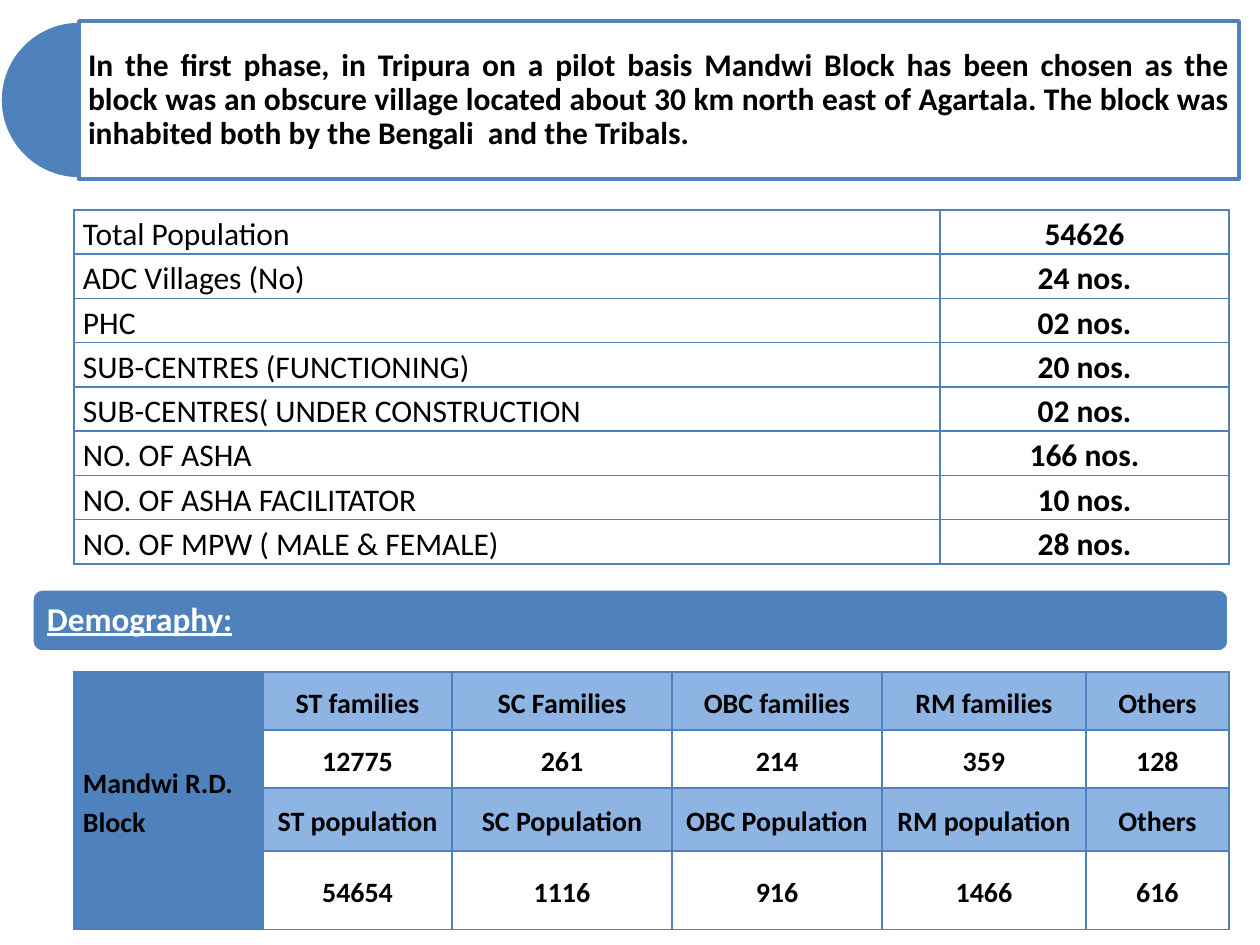
from lxml.etree import SubElement
from pptx import Presentation
from pptx.dml.color import RGBColor
from pptx.enum.shapes import MSO_SHAPE
from pptx.enum.text import MSO_ANCHOR, MSO_AUTO_SIZE, PP_ALIGN
from pptx.oxml.ns import qn
from pptx.util import Pt

PX = 914400 / 126
COLORS = {"blue": "4F81BD", "light": "8EB4E3", "white": "FFFFFF", "black": "000000"}
COLORS = {name: RGBColor.from_string(value) for name, value in COLORS.items()}


def px(*values):
    return [round(v * PX) for v in values]


def write(tf, text, color, align, spacing, **font):
    p = tf.paragraphs[0]
    p.alignment, p.line_spacing = align, spacing
    r = p.add_run()
    r.text = text
    r.font.color.rgb = COLORS[color]
    for name, value in {"name": "Calibri", **font}.items():
        setattr(r.font, name, value)


prs = Presentation()
prs.slide_width, prs.slide_height = px(1260, 945)
s = prs.slides.add_slide(prs.slide_layouts[5])

intro = s.shapes.title
intro.left, intro.top, intro.width, intro.height = px(79, 21, 1160, 158)
pie = s.shapes.add_shape(MSO_SHAPE.PIE, *px(0, 21, 158, 158))
pie.adjustments[0], pie.adjustments[1] = 54, 162
s.shapes._spTree.insert(2, pie._element)
bar = s.shapes.add_shape(MSO_SHAPE.ROUNDED_RECTANGLE, *px(32, 589, 1197, 63))

for sp, fill, line in [(pie, "blue", "white"), (intro, "white", "blue"), (bar, "blue", "white")]:
    sp.shadow.inherit = False
    sp.fill.solid()
    sp.fill.fore_color.rgb = COLORS[fill]
    sp.line.color.rgb = COLORS[line]
    sp.line.width = Pt(2)

for sp, inset in [(intro, 9), (bar, 12)]:
    tf = sp.text_frame
    tf.word_wrap, tf.auto_size = True, MSO_AUTO_SIZE.NONE
    tf.vertical_anchor = MSO_ANCHOR.MIDDLE
    for side in ("left", "top", "right", "bottom"):
        setattr(tf, "margin_" + side, px(inset)[0])

write(intro.text_frame,
      "In the first phase, in Tripura on a pilot basis Mandwi Block has been chosen as the "
      "block was an obscure village located about 30 km north east of Agartala. The block was "
      "inhabited both by the Bengali  and the Tribals.",
      "black", PP_ALIGN.JUSTIFY, 0.9, size=Pt(18), bold=True)
write(bar.text_frame, "Demography:", "white", PP_ALIGN.LEFT, 0.9,
      size=Pt(19), bold=True, underline=True)

facts = [
    ["Total Population", "54626"],
    ["ADC Villages (No)", "24 nos."],
    ["PHC", "02 nos."],
    ["SUB-CENTRES (FUNCTIONING)", "20 nos."],
    ["SUB-CENTRES( UNDER CONSTRUCTION", "02 nos."],
    ["NO. OF ASHA", "166 nos."],
    ["NO. OF ASHA FACILITATOR", "10 nos."],
    ["NO. OF MPW ( MALE & FEMALE)", "28 nos."],
]
demography = [
    ["Mandwi R.D. Block", "ST families", "SC Families", "OBC families", "RM families", "Others"],
    ["", "12775", "261", "214", "359", "128"],
    ["", "ST population", "SC Population", "OBC Population", "RM population", "Others"],
    ["", "54654", "1116", "916", "1466", "616"],
]
tables = [
    (facts, 210, [866, 289], [44] * 8,
     {"size": 18, "anchor": MSO_ANCHOR.TOP, "label_bold": False, "banded": False}),
    (demography, 672, [189, 189, 220, 210, 204, 143], [58, 58, 63, 78],
     {"size": 16, "anchor": MSO_ANCHOR.MIDDLE, "label_bold": True, "banded": True}),
]

for rows, top, widths, heights, fmt in tables:
    frame = s.shapes.add_table(len(rows), len(widths), *px(74, top, sum(widths), sum(heights)))
    table = frame.table
    table.first_row = table.horz_banding = False
    for col, width in zip(table.columns, px(*widths)):
        col.width = width
    for row, height in zip(table.rows, px(*heights)):
        row.height = height
    for i, texts in enumerate(rows):
        for j, text in enumerate(texts):
            cell = table.cell(i, j)
            cell.margin_left = cell.margin_right = px(9)[0]
            cell.margin_top = cell.margin_bottom = 0
            cell.vertical_anchor = fmt["anchor"]
            tcPr = cell._tc.get_or_add_tcPr()
            for edge in ("a:lnL", "a:lnR", "a:lnT", "a:lnB"):
                ln = SubElement(tcPr, qn(edge), w=str(Pt(1)))
                SubElement(SubElement(ln, qn("a:solidFill")), qn("a:srgbClr"),
                           val=str(COLORS["blue"]))
            fill = "white"
            if fmt["banded"]:
                fill = "blue" if j == 0 else "white" if i % 2 else "light"
            cell.fill.solid()
            cell.fill.fore_color.rgb = COLORS[fill]
            if text:
                write(cell.text_frame, text, "black", PP_ALIGN.CENTER if j else PP_ALIGN.LEFT,
                      1.15, size=Pt(fmt["size"]), bold=j > 0 or fmt["label_bold"])

table.cell(0, 0).merge(table.cell(3, 0))

prs.save("out.pptx")
